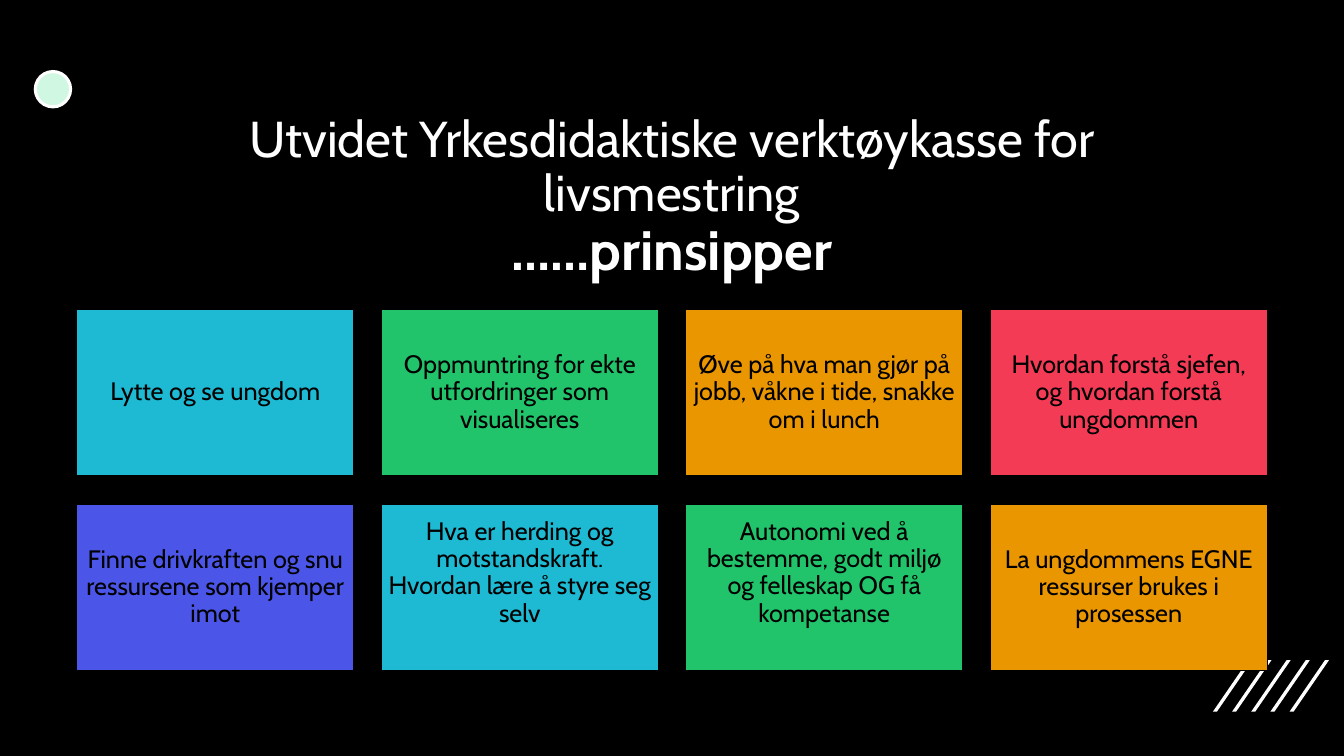
from dataclasses import dataclass

from pptx import Presentation
from pptx.dml.color import RGBColor
from pptx.enum import shapes, text
from pptx.util import Inches, Pt

FONT = "Cabin"
COLOURS = {
    "black": "000000",
    "white": "FFFFFF",
    "mint": "CFF7E1",
    "cyan": "1EB9D3",
    "green": "21C46B",
    "orange": "EA9600",
    "red": "F43B56",
    "indigo": "4B56E8",
}
COLUMNS = 4
CARD_LEFT, CARD_TOP = 0.76, 3.07
CARD_WIDTH, CARD_HEIGHT = 2.75, 1.65
COLUMN_STEP, ROW_STEP = 3.02, 1.93
CARD_INSET = 0.07
STRIPE_COUNT, STRIPE_STEP = 5, 0.19


@dataclass
class Card:
    wording: str
    colour: str
    bottom_inset: float = CARD_INSET


CARDS = [
    Card("Lytte og se ungdom", "cyan"),
    Card("Oppmuntring for ekte utfordringer som visualiseres", "green"),
    Card("Øve på hva man gjør på jobb, våkne i tide, snakke om i lunch", "orange"),
    Card("Hvordan forstå sjefen, og hvordan forstå ungdommen", "red"),
    Card("Finne drivkraften og snu ressursene som kjemper imot", "indigo"),
    Card("Hva er herding og motstandskraft. Hvordan lære å styre seg selv", "cyan", 0.35),
    Card("Autonomi ved å bestemme, godt miljø og felleskap OG få kompetanse", "green", 0.35),
    Card("La ungdommens EGNE ressurser brukes i prosessen", "orange"),
]


def rgb(name: str) -> RGBColor:
    return RGBColor.from_string(COLOURS[name])


def paint(shape, fill: str, line: str | None = None, line_width: float = 1) -> None:
    """Give a shape a flat fill, an optional outline and no shadow."""
    shape.shadow.inherit = False
    shape.fill.solid()
    shape.fill.fore_color.rgb = rgb(fill)
    if line is None:
        shape.line.fill.background()
    else:
        shape.line.color.rgb = rgb(line)
        shape.line.width = Pt(line_width)


def add_run(paragraph, wording: str, size: float, colour: str, bold: bool = False) -> None:
    run = paragraph.add_run()
    run.text = wording
    run.font.name = FONT
    run.font.size = Pt(size)
    run.font.bold = bold
    run.font.color.rgb = rgb(colour)


def centre(paragraph) -> None:
    paragraph.alignment = text.PP_ALIGN.CENTER
    paragraph.line_spacing = 0.9
    paragraph.space_before = Pt(0)


def add_stripe(slide, left: float) -> None:
    corners = [(0.04, 7.06), (0, 7.06), (0.35, 6.55), (0.39, 6.55)]
    points = [(Inches(left + x), Inches(y)) for x, y in corners]
    builder = slide.shapes.build_freeform(*points[0])
    builder.add_line_segments(points[1:], close=True)
    paint(builder.convert_to_shape(), "white")


def add_dot(slide) -> None:
    dot = slide.shapes.add_shape(
        shapes.MSO_SHAPE.OVAL, Inches(0.35), Inches(0.71), Inches(0.35), Inches(0.35)
    )
    paint(dot, "mint", "white", 2.25)


def format_title(slide) -> None:
    title = slide.shapes.title
    title.left, title.top = Inches(1.25), Inches(1.08)
    title.width, title.height = Inches(10.83), Inches(0.75)
    frame = title.text_frame
    frame.word_wrap = True
    frame.auto_size = text.MSO_AUTO_SIZE.NONE
    frame.vertical_anchor = text.MSO_ANCHOR.TOP
    paragraph = frame.paragraphs[0]
    centre(paragraph)
    add_run(paragraph, "Utvidet Yrkesdidaktiske verktøykasse for livsmestring", 36, "white")
    paragraph.add_line_break()
    add_run(paragraph, "……prinsipper", 39.6, "white", bold=True)


def add_card(slide, card: Card, row: int, column: int) -> None:
    shape = slide.shapes.add_shape(
        shapes.MSO_SHAPE.RECTANGLE,
        Inches(CARD_LEFT + column * COLUMN_STEP),
        Inches(CARD_TOP + row * ROW_STEP),
        Inches(CARD_WIDTH),
        Inches(CARD_HEIGHT),
    )
    paint(shape, card.colour, "black")
    frame = shape.text_frame
    frame.word_wrap = True
    frame.vertical_anchor = text.MSO_ANCHOR.MIDDLE
    frame.margin_left = frame.margin_right = frame.margin_top = Inches(CARD_INSET)
    frame.margin_bottom = Inches(card.bottom_inset)
    paragraph = frame.paragraphs[0]
    centre(paragraph)
    add_run(paragraph, card.wording, 18, "black")


def main() -> None:
    presentation = Presentation()
    presentation.slide_width, presentation.slide_height = Inches(13.33), Inches(7.5)
    slide = presentation.slides.add_slide(presentation.slide_layouts.get_by_name("Title Only"))
    slide.background.fill.solid()
    slide.background.fill.fore_color.rgb = rgb("black")

    for index in range(STRIPE_COUNT):
        add_stripe(slide, 12.03 + index * STRIPE_STEP)
    add_dot(slide)
    format_title(slide)
    for index, card in enumerate(CARDS):
        add_card(slide, card, *divmod(index, COLUMNS))

    presentation.save("out.pptx")


if __name__ == "__main__":
    main()
